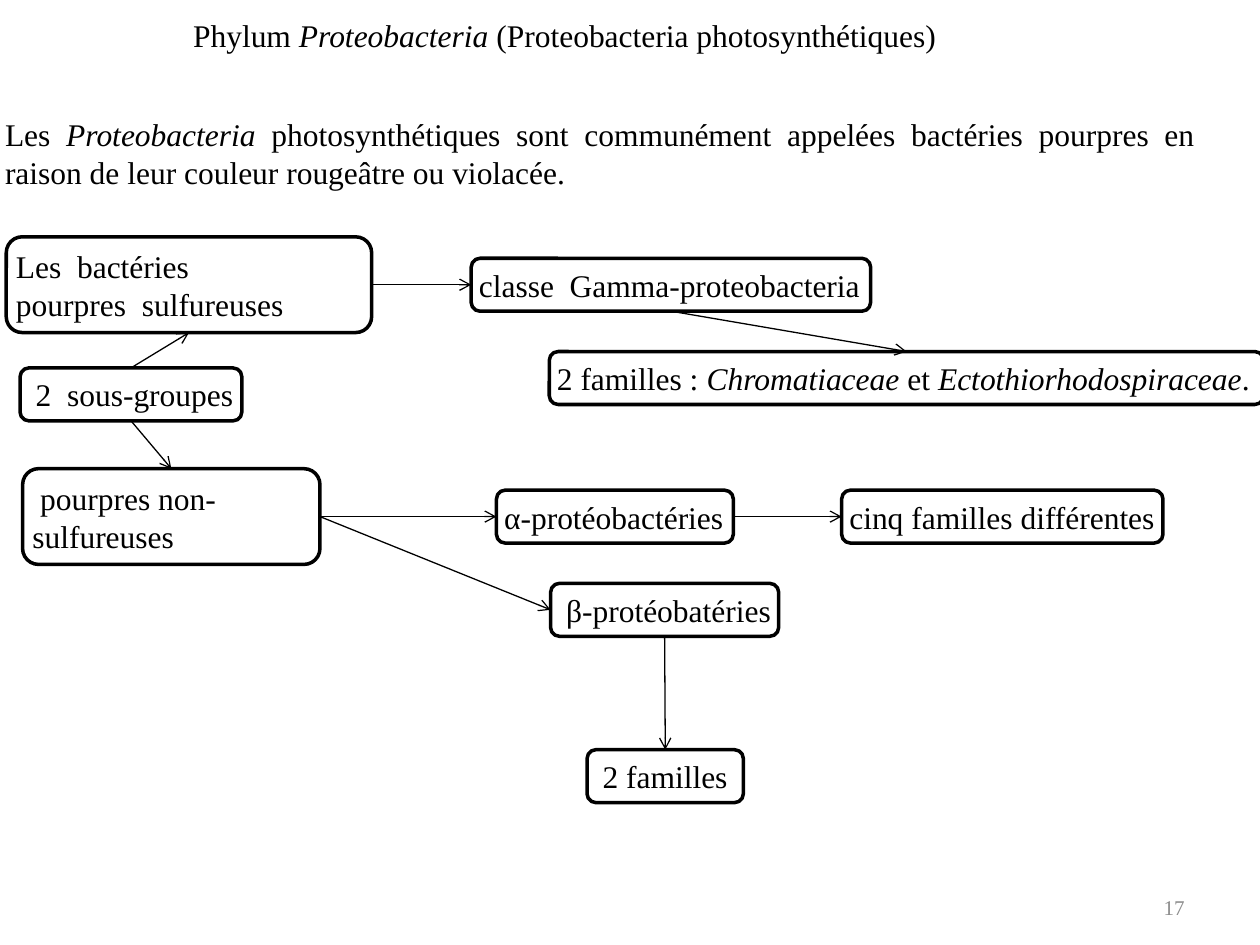
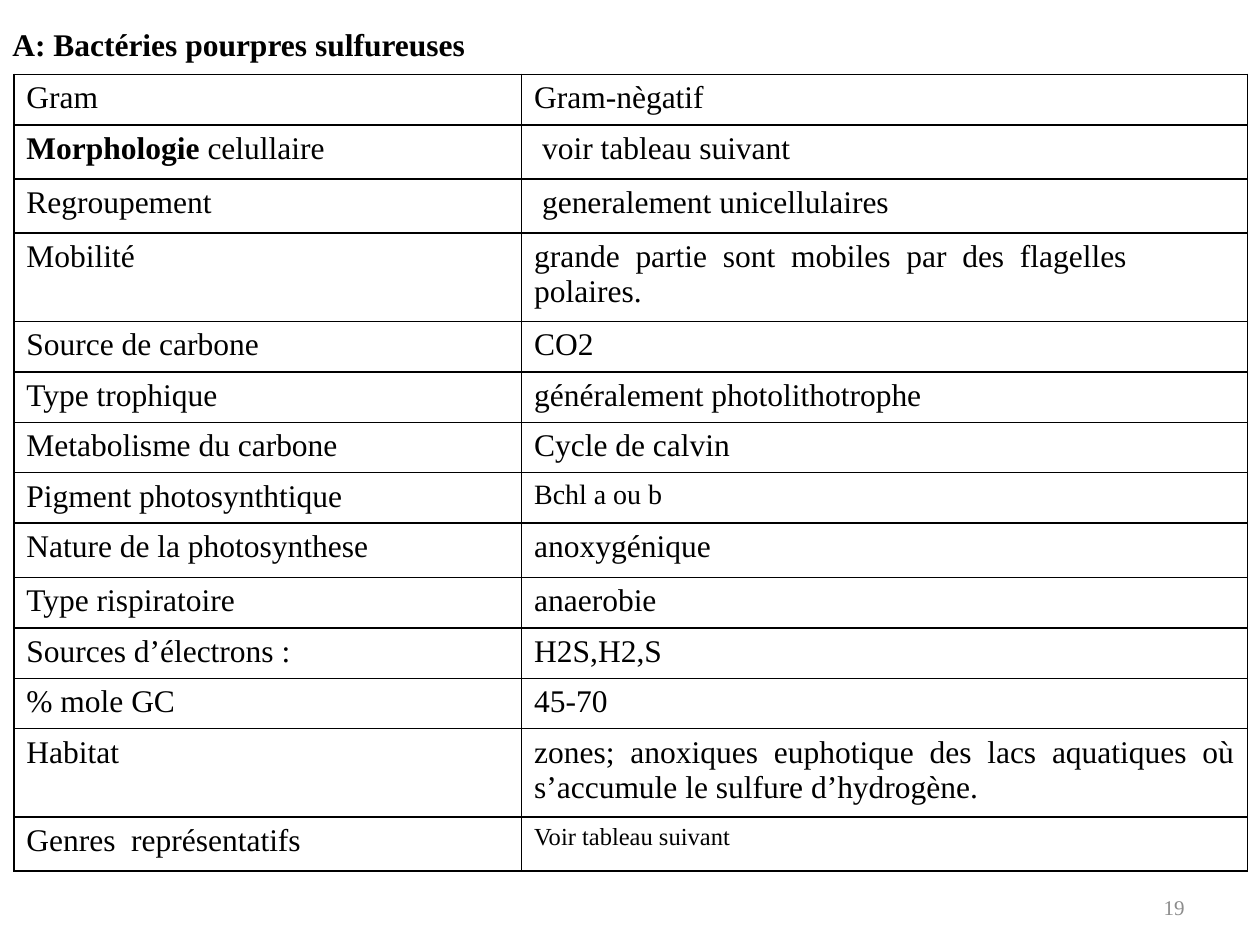
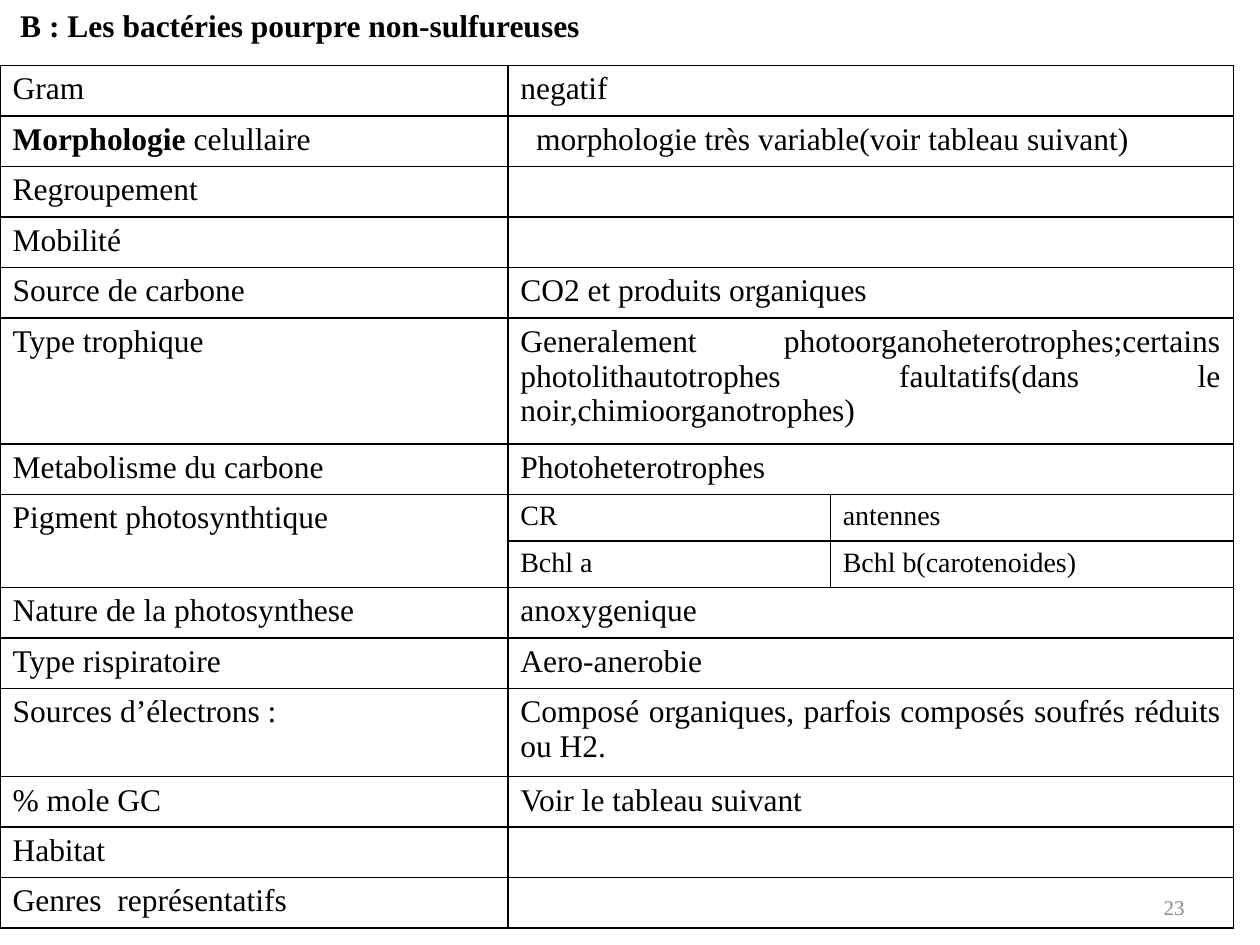
from lxml import etree
from pptx import Presentation
from pptx.dml.color import RGBColor
from pptx.enum.shapes import MSO_CONNECTOR, MSO_SHAPE
from pptx.enum.text import MSO_ANCHOR, PP_ALIGN
from pptx.oxml.ns import qn
from pptx.util import Inches, Pt

BLACK = RGBColor(0x00, 0x00, 0x00)
WHITE = RGBColor(0xFF, 0xFF, 0xFF)
GREY = RGBColor(0x8C, 0x8C, 0x8C)

LEFT, RIGHT, JUSTIFY = PP_ALIGN.LEFT, PP_ALIGN.RIGHT, PP_ALIGN.JUSTIFY
TOP_ANCHOR, MIDDLE = MSO_ANCHOR.TOP, MSO_ANCHOR.MIDDLE
ROUNDED, STRAIGHT = MSO_SHAPE.ROUNDED_RECTANGLE, MSO_CONNECTOR.STRAIGHT
TOP_SITE, LEFT_SITE, BOTTOM_SITE, RIGHT_SITE = range(4)

BODY = {"name": "Times New Roman", "size": Pt(18)}
HEADING = {**BODY, "bold": True}
SMALL_PRINT = {**BODY, "size": Pt(12)}
LINE_PITCH = Pt(21.6)
TIGHT = 0.04
ROW_HEIGHT = 0.4
NUMBER_BOX = (7.17, 6.95, 2.33, 0.4)

# Text between asterisks is emphasised
LABELS = [
    "Gram", "*Morphologie* celullaire", "Regroupement", "Mobilité",
    "Source de carbone", "Type trophique", "Metabolisme du carbone",
    "Pigment photosynthtique", "Nature de la photosynthese",
    "Type rispiratoire", "Sources d’électrons :", "% mole GC", "Habitat",
    "Genres  représentatifs",
]

# Diagram nodes: box, lines of text, wrapping
NODES = {
    "subgroups": ((0.16, 2.92, 1.76, 0.42), [" 2  sous-groupes"], False),
    "gamma families": ((4.36, 2.79, 5.67, 0.42),
                       ["2 familles : *Chromatiaceae* et *Ectothiorhodospiraceae*."], True),
    "sulfur": ((0.05, 1.88, 2.9, 0.76), ["Les  bactéries", "pourpres  sulfureuses"], True),
    "non-sulfur": ((0.18, 3.72, 2.36, 0.76), [" pourpres non-", "sulfureuses"], True),
    "gamma": ((3.74, 2.05, 3.17, 0.42), ["classe  Gamma-proteobacteria"], False),
    "alpha": ((3.94, 3.89, 1.88, 0.42), ["α-protéobactéries"], False),
    "alpha families": ((6.68, 3.89, 2.55, 0.42), ["cinq familles différentes"], False),
    "beta": ((4.37, 4.63, 1.81, 0.42), [" β-protéobatéries"], False),
    "beta families": ((4.66, 5.95, 1.24, 0.42), [" 2 familles"], False),
}
ARROWS = [
    ("subgroups", TOP_SITE, "sulfur", BOTTOM_SITE),
    ("subgroups", BOTTOM_SITE, "non-sulfur", TOP_SITE),
    ("sulfur", RIGHT_SITE, "gamma", LEFT_SITE),
    ("gamma", BOTTOM_SITE, "gamma families", TOP_SITE),
    ("non-sulfur", RIGHT_SITE, "alpha", LEFT_SITE),
    ("non-sulfur", RIGHT_SITE, "beta", LEFT_SITE),
    ("alpha", RIGHT_SITE, "alpha families", LEFT_SITE),
    ("beta", BOTTOM_SITE, "beta families", TOP_SITE),
]

SULFUR_VALUES = [
    ["Gram-nègatif"], [" voir tableau suivant"], [" generalement unicellulaires"],
    ["grande  partie  sont  mobiles  par  des  flagelles\npolaires."],
    ["CO2"], ["généralement photolithotrophe"], ["Cycle de calvin"],
    ["Bchl a ou b"], ["anoxygénique"], ["anaerobie"], ["H2S,H2,S"], ["45-70"],
    ["zones; anoxiques euphotique des lacs aquatiques où s’accumule le "
     "sulfure d’hydrogène."],
    ["Voir tableau suivant"],
]
NON_SULFUR_VALUES = [
    ["negatif"], ["  morphologie très variable(voir tableau suivant)"], [""], [""],
    ["CO2 et produits organiques"],
    ["Generalement photoorganoheterotrophes;certains photolithautotrophes "
     "faultatifs(dans le noir,chimioorganotrophes)"],
    ["Photoheterotrophes"], ["CR", "antennes"], ["Bchl a", "Bchl b(carotenoides)"],
    ["anoxygenique"], ["Aero-anerobie"],
    ["Composé organiques, parfois composés soufrés réduits ou H2."],
    ["Voir le tableau suivant"], [""], [""],
]


def inches(box):
    return [Inches(value) for value in box]


def write(frame, lines, format_values, emphasis="italic", color=BLACK,
          alignment=LEFT, pitch=None):
    for index, line in enumerate(lines):
        paragraph = frame.paragraphs[0] if index == 0 else frame.add_paragraph()
        paragraph.alignment = alignment
        if pitch:
            paragraph.line_spacing = pitch
        for part, text in enumerate(line.split("*")):
            if not text:
                continue
            run = paragraph.add_run()
            run.text = text
            for name, value in format_values.items():
                setattr(run.font, name, value)
            run.font.color.rgb = color
            if part % 2:
                setattr(run.font, emphasis, True)


def set_frame(frame, wrap, anchor, margin=None):
    frame.word_wrap = wrap
    frame.vertical_anchor = anchor
    if margin is not None:
        for side in ("left", "top", "right", "bottom"):
            setattr(frame, f"margin_{side}", Inches(margin))


def add_text(slide, box, text, format_values=BODY, anchor=MIDDLE, margin=None,
             wrap=True, **options):
    frame = slide.shapes.add_textbox(*inches(box)).text_frame
    set_frame(frame, wrap, anchor, margin)
    write(frame, [text], format_values, pitch=LINE_PITCH, **options)


def add_number(slide, number):
    add_text(slide, NUMBER_BOX, number, SMALL_PRINT, color=GREY, alignment=RIGHT)


def add_node(slide, box, lines, wrap):
    shape = slide.shapes.add_shape(ROUNDED, *inches(box))
    shape.shadow.inherit = False
    shape.fill.solid()
    shape.fill.fore_color.rgb = WHITE
    shape.line.color.rgb = BLACK
    shape.line.width = Pt(2)
    set_frame(shape.text_frame, wrap, MIDDLE, TIGHT)
    write(shape.text_frame, lines, BODY, pitch=LINE_PITCH)
    return shape


def add_arrow(slide, start, start_site, end, end_site):
    arrow = slide.shapes.add_connector(STRAIGHT, 0, 0, 0, 0)
    arrow.begin_connect(start, start_site)
    arrow.end_connect(end, end_site)
    arrow.line.color.rgb = BLACK
    arrow.line.width = Pt(0.75)
    etree.SubElement(arrow.line._get_or_add_ln(), qn("a:tailEnd"), type="arrow")
    etree.SubElement(arrow._element.spPr, qn("a:effectLst"))


def style_cell(cell):
    properties = cell._tc.get_or_add_tcPr()
    for side in ("lnL", "lnR", "lnT", "lnB"):
        border = etree.SubElement(properties, qn(f"a:{side}"), w=str(Pt(1)))
        fill = etree.SubElement(border, qn("a:solidFill"))
        etree.SubElement(fill, qn("a:srgbClr"), val=str(BLACK))
    cell.fill.background()


def add_trait_table(slide, left, top, widths, labels, values, heights, sizes):
    """A label of None joins the cell above; a short row spans to the right edge."""
    row_heights = [heights.get(row, ROW_HEIGHT) for row in range(len(labels))]
    box = (left, top, sum(widths), sum(row_heights))
    table = slide.shapes.add_table(len(labels), len(widths), *inches(box)).table
    table.first_row = table.horz_banding = False
    for column, width in zip(table.columns, widths):
        column.width = Inches(width)
    for row, height in zip(table.rows, row_heights):
        row.height = Inches(height)
    for cell in table.iter_cells():
        style_cell(cell)

    last_column = len(widths) - 1
    for row, (label, row_values) in enumerate(zip(labels, values)):
        if label is None:
            table.cell(row - 1, 0).merge(table.cell(row, 0))
        else:
            write(table.cell(row, 0).text_frame, [label], BODY, "bold", alignment=JUSTIFY)
        value_format = {**BODY, "size": Pt(sizes.get(row, 18))}
        for column, text in enumerate(row_values, start=1):
            write(table.cell(row, column).text_frame, text.split("\n"), value_format,
                  alignment=JUSTIFY)
        if len(row_values) < last_column:
            table.cell(row, len(row_values)).merge(table.cell(row, last_column))


def build_phylum_slide(slide):
    add_text(slide, (1.43, 0.09, 6.17, 0.38),
             " Phylum *Proteobacteria* (Proteobacteria photosynthétiques)", margin=TIGHT)
    add_text(slide, (0, 0.87, 9.76, 0.69),
             "Les  *Proteobacteria*  photosynthétiques  sont  communément  appelées  "
             "bactéries  pourpres  en raison de leur couleur rougeâtre ou violacée.",
             margin=TIGHT)
    nodes = {name: add_node(slide, *node) for name, node in NODES.items()}
    for start, start_site, end, end_site in ARROWS:
        add_arrow(slide, nodes[start], start_site, nodes[end], end_site)
    add_number(slide, "17")


def build_sulfur_slide(slide):
    add_text(slide, (0, 0.15, 5, 0.4), "A: Bactéries pourpres sulfureuses", HEADING, TOP_ANCHOR)
    tall_rows = {**dict.fromkeys((1, 2, 8, 13), 0.43), 3: 0.7, 12: 0.7}
    add_trait_table(slide, 0.11, 0.59, (4.03, 5.76), LABELS, SULFUR_VALUES,
                    tall_rows, {7: 16, 13: 14})
    add_number(slide, "19")


def build_non_sulfur_slide(slide):
    add_text(slide, (0, 0, 4.75, 0.4), " B : Les bactéries pourpre non-sulfureuses",
             HEADING, TOP_ANCHOR, wrap=False)
    labels = LABELS[:8] + [None] + LABELS[8:]
    add_trait_table(slide, 0, 0.52, (4.03, 2.56, 3.2), labels, NON_SULFUR_VALUES,
                    {5: 1.0, 7: 0.37, 8: 0.37, 11: 0.7}, {7: 16, 8: 16})
    add_number(slide, "23")


def main():
    presentation = Presentation()
    presentation.slide_width = Inches(10)
    presentation.slide_height = Inches(7.5)
    for build in (build_phylum_slide, build_sulfur_slide, build_non_sulfur_slide):
        build(presentation.slides.add_slide(presentation.slide_layouts[6]))
    presentation.save("out.pptx")


if __name__ == "__main__":
    main()
